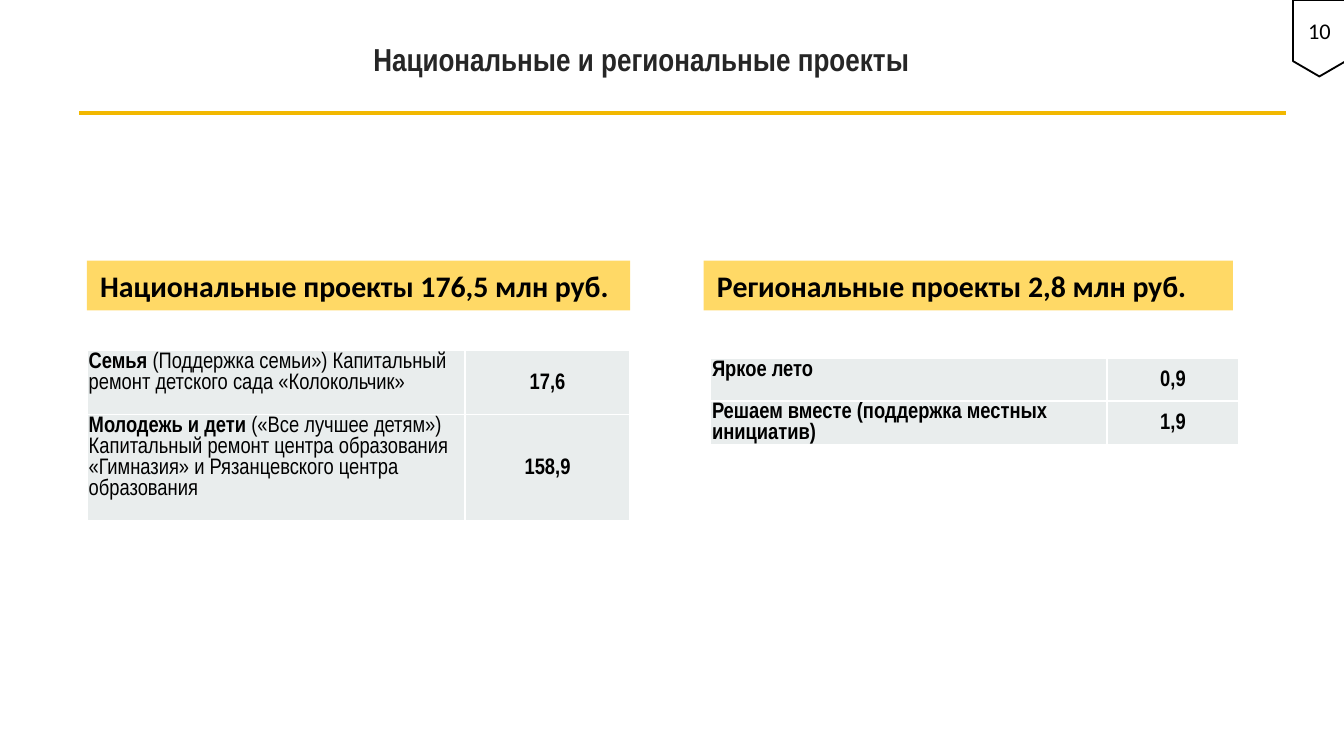
from lxml.etree import SubElement
from pptx import Presentation
from pptx.dml.color import RGBColor
from pptx.enum.shapes import MSO_CONNECTOR as Connector, MSO_SHAPE as Shape
from pptx.enum.text import MSO_ANCHOR as Anchor, MSO_AUTO_SIZE as AutoSize, PP_ALIGN as Align
from pptx.oxml.ns import qn
from pptx.util import Pt

BLACK, WHITE, GOLD, YELLOW, GRAY = "000000", "FFFFFF", "F2B800", "FFD966", "E9EDED"
TITLE = {"name": "Arial Narrow", "size": Pt(17), "bold": True}
BAND = {"name": "Calibri", "size": Pt(16), "bold": True}
NUMBER = {"name": "Calibri", "size": Pt(12), "bold": False}
CELL = {"name": "Arial Narrow", "size": Pt(12)}

NATIONAL = [
    ([[("Семья ", True),
       ("(Поддержка семьи») Капитальный ремонт детского сада «Колокольчик»", False)]], "17,6"),
    ([[("Молодежь и дети ", True), ("(«Все лучшее детям»)", False)],
      [("Капитальный ремонт центра образования «Гимназия» и Рязанцевского центра образования",
        False)]], "158,9"),
]
REGIONAL = [
    ([[("Яркое лето", True)]], "0,9"),
    ([[("Решаем вместе (поддержка местных инициатив)", True)]], "1,9"),
]


def color(value):
    return RGBColor.from_string(value)


def set_values(target, values):
    for name, value in values.items():
        setattr(target, name, value)


def format_font(font, values, font_color=BLACK):
    set_values(font, values)
    font.color.rgb = color(font_color)


def add_title(slide, text):
    title = slide.shapes.title
    set_values(title, {"left": Pt(195), "top": Pt(6.5), "width": Pt(312), "height": Pt(52.5)})
    frame = title.text_frame
    set_values(frame, {"auto_size": AutoSize.NONE, "word_wrap": True,
                       "vertical_anchor": Anchor.MIDDLE,
                       "margin_left": Pt(5), "margin_right": Pt(5),
                       "margin_top": Pt(3), "margin_bottom": Pt(3)})
    frame.text = text
    paragraph = frame.paragraphs[0]
    set_values(paragraph, {"alignment": Align.LEFT, "line_spacing": 0.9})
    format_font(paragraph.runs[0].font, TITLE, "262626")


def add_rule(slide, left, right, top):
    rule = slide.shapes.add_connector(Connector.STRAIGHT, Pt(left), Pt(top), Pt(right), Pt(top))
    rule.line.color.rgb = color(GOLD)
    rule.line.width = Pt(2.25)
    SubElement(rule._element.spPr, qn("a:effectLst"))


def add_box(slide, kind, box, text, font, fill, anchor, alignment, line=None):
    shape = slide.shapes.add_shape(kind, *map(Pt, box))
    shape.shadow.inherit = False
    shape.fill.solid()
    shape.fill.fore_color.rgb = color(fill)
    if line:
        shape.line.color.rgb = color(line)
        shape.line.width = Pt(1)
    else:
        shape.line.fill.background()
    frame = shape.text_frame
    set_values(frame, {"word_wrap": True, "vertical_anchor": anchor, "text": text})
    frame.paragraphs[0].alignment = alignment
    format_font(frame.paragraphs[0].runs[0].font, font)


def add_borders(cell):
    properties = cell._tc.get_or_add_tcPr()
    for position, side in enumerate(("lnL", "lnR", "lnT", "lnB")):
        border = properties.makeelement(qn(f"a:{side}"), {"w": str(Pt(1))})
        fill = SubElement(border, qn("a:solidFill"))
        SubElement(fill, qn("a:srgbClr"), val=WHITE)
        properties.insert(position, border)


def fill_cell(cell, paragraphs, anchor, alignment):
    set_values(cell, {"margin_left": Pt(0.75), "margin_right": Pt(0.75),
                      "margin_top": Pt(0.75), "margin_bottom": 0,
                      "vertical_anchor": anchor})
    cell.fill.solid()
    cell.fill.fore_color.rgb = color(GRAY)
    add_borders(cell)
    frame = cell.text_frame
    for index, runs in enumerate(paragraphs):
        paragraph = frame.add_paragraph() if index else frame.paragraphs[0]
        paragraph.alignment = alignment
        for text, bold in runs:
            run = paragraph.add_run()
            run.text = text
            format_font(run.font, CELL | {"bold": bold})


def add_projects(slide, left, top, widths, heights, projects):
    table = slide.shapes.add_table(len(projects), 2, Pt(left), Pt(top),
                                   Pt(sum(widths)), Pt(sum(heights))).table
    set_values(table, {"first_row": False, "horz_banding": False})
    for column, width in zip(table.columns, widths):
        column.width = Pt(width)
    for index, (description, amount) in enumerate(projects):
        table.rows[index].height = Pt(heights[index])
        fill_cell(table.cell(index, 0), description, Anchor.TOP, Align.LEFT)
        fill_cell(table.cell(index, 1), [[(amount, True)]], Anchor.MIDDLE, Align.CENTER)


def main():
    presentation = Presentation()
    set_values(presentation, {"slide_width": Pt(720), "slide_height": Pt(405)})
    slide = presentation.slides.add_slide(presentation.slide_layouts[5])
    add_title(slide, "Национальные и региональные проекты")
    add_rule(slide, 42.5, 689, 60.5)
    add_projects(slide, 46.8, 187.8, (202.3, 88.5), (34.3, 56.8), NATIONAL)
    add_projects(slide, 380.7, 192.1, (212.4, 70.6), (22.75, 22.75), REGIONAL)
    for left, width, text in ((46.6, 291, "Национальные проекты 176,5 млн руб."),
                              (377, 283.5, "Региональные проекты 2,8 млн руб.")):
        add_box(slide, Shape.RECTANGLE, (left, 139.7, width, 26.7), text,
                BAND, YELLOW, Anchor.TOP, Align.LEFT)
    add_box(slide, Shape.FLOWCHART_OFFPAGE_CONNECTOR, (692.7, 0, 28.3, 41), "10",
            NUMBER, WHITE, Anchor.MIDDLE, Align.CENTER, BLACK)
    presentation.save("out.pptx")


if __name__ == "__main__":
    main()
